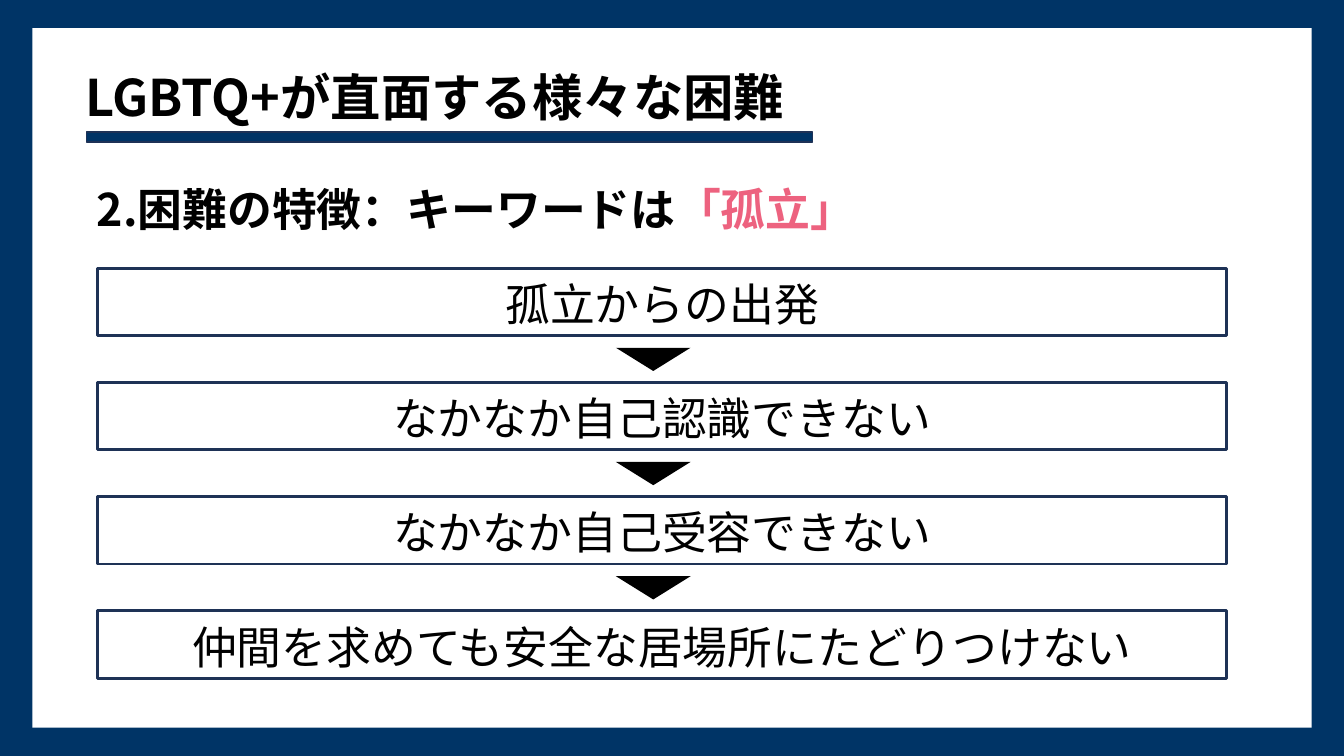
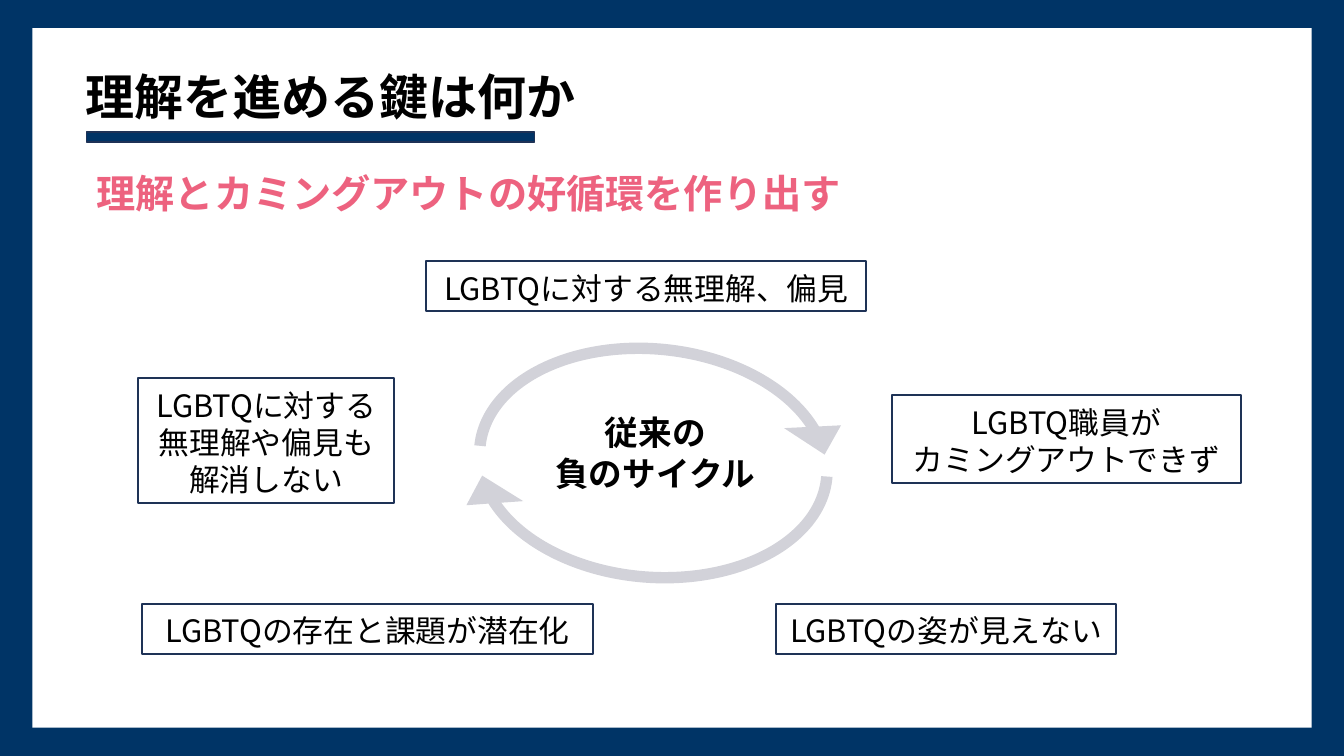
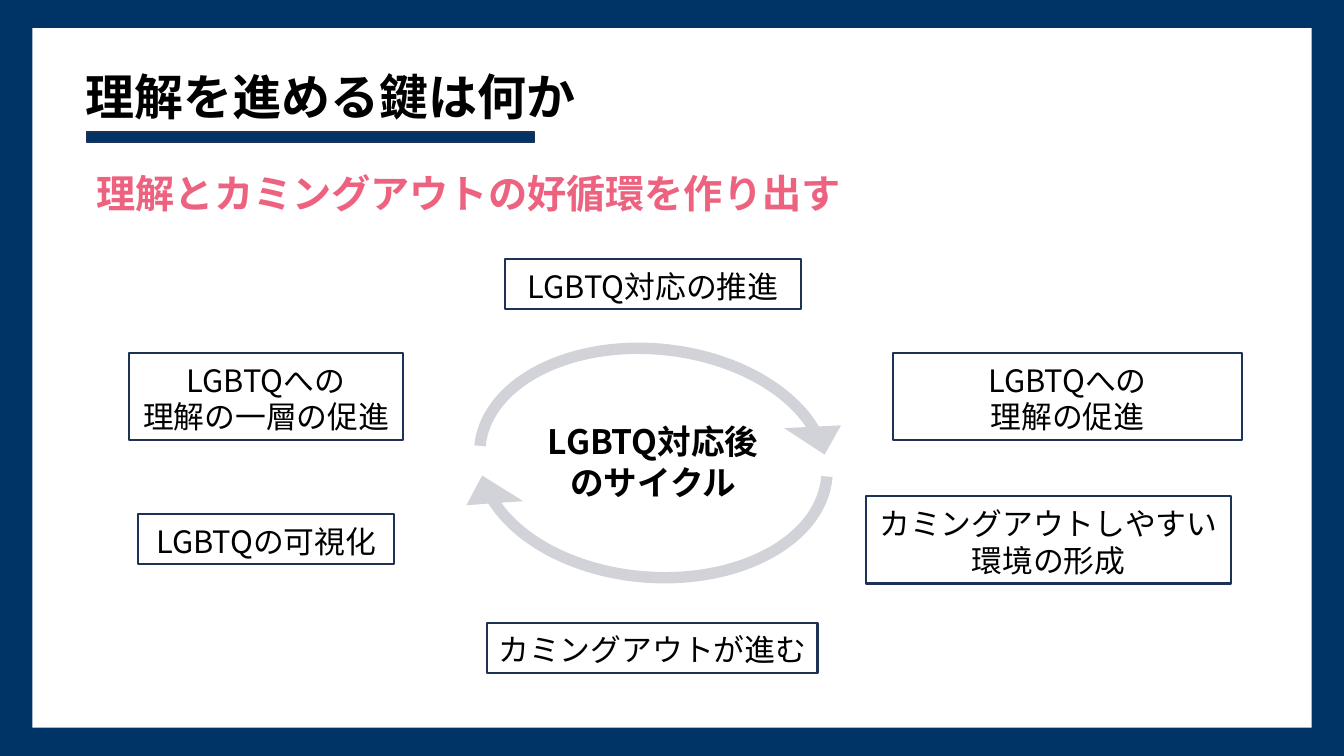
import pptx
import pptx.dml.color
import pptx.enum.shapes
import pptx.enum.text
import pptx.oxml.ns
import pptx.util
from lxml import etree

RGBColor = pptx.dml.color.RGBColor
SHAPE = pptx.enum.shapes.MSO_SHAPE
ALIGN = pptx.enum.text.PP_ALIGN
ANCHOR = pptx.enum.text.MSO_ANCHOR

NAVY = RGBColor(0x00, 0x34, 0x66)
OUTLINE = RGBColor(0x1E, 0x32, 0x56)
PINK = RGBColor(0xED, 0x62, 0x7F)
GRAY = RGBColor(0xD2, 0xD2, 0xD9)
BLACK = RGBColor(0x00, 0x00, 0x00)
WHITE = RGBColor(0xFF, 0xFF, 0xFF)
FONT = "Noto Sans CJK JP"

deck = pptx.Presentation()
deck.slide_width = pptx.util.Inches(13.33)
deck.slide_height = pptx.util.Inches(7.5)
deck.slide_master.background.fill.solid()
deck.slide_master.background.fill.fore_color.rgb = NAVY


def add_block(page, kind, area, fill=None, line_width=0):
    """Add a preset shape, or a text box if kind is None; area is in percent of the slide."""
    left, top, width, height = area
    lengths = [round(deck.slide_width * left / 100), round(deck.slide_height * top / 100),
               round(deck.slide_width * width / 100), round(deck.slide_height * height / 100)]
    if kind is None:
        return page.shapes.add_textbox(*lengths)
    block = page.shapes.add_shape(kind, *lengths)
    block.shadow.inherit = False
    if fill is None:
        block.fill.background()
    else:
        block.fill.solid()
        block.fill.fore_color.rgb = fill
    if line_width:
        block.line.color.rgb = OUTLINE
        block.line.width = pptx.util.Pt(line_width)
    else:
        block.line.fill.background()
    return block


def write(block, lines, size, bold=False, align=ALIGN.CENTER, anchor=ANCHOR.MIDDLE):
    """Write one paragraph per line; a line is a list of (text, colour) spans."""
    frame = block.text_frame
    frame.word_wrap = True
    frame.vertical_anchor = anchor
    for index, spans in enumerate(lines):
        para = frame.paragraphs[0] if index == 0 else frame.add_paragraph()
        para.alignment = align
        for text, color in spans:
            span = para.add_run()
            span.text = text
            span.font.size = pptx.util.Pt(size)
            span.font.bold = bold
            span.font.color.rgb = color
            span.font.name = FONT
            east_asian = etree.SubElement(span._r.get_or_add_rPr(), pptx.oxml.ns.qn("a:ea"))
            east_asian.set("typeface", FONT)


# Frame, title, rule and heading of every slide
KEY_TITLE = "理解を進める鍵は何か"
KEY_HEADING = [("理解とカミングアウトの好循環を作り出す", PINK)]
HEADERS = [
    ("LGBTQ+が直面する様々な困難", 36, 54,
     [("2.困難の特徴：キーワードは", BLACK), ("「孤立」", PINK)], 32, 23.33),
    (KEY_TITLE, 35, 33.3, KEY_HEADING, 28, 21.73),
    (KEY_TITLE, 35, 33.3, KEY_HEADING, 28, 21.73),
]
pages = []
for title, title_size, rule_width, heading, heading_size, heading_top in HEADERS:
    page = deck.slides.add_slide(deck.slide_layouts[6])
    pages.append(page)
    add_block(page, SHAPE.RECTANGLE, (2.4, 3.73, 95.2, 92.53), WHITE)
    title_box = add_block(page, None, (5.63, 8.4, 90.9, 9.6))
    write(title_box, [[(title, BLACK)]], title_size, True, ALIGN.LEFT)
    title_box.text_frame.paragraphs[0].line_spacing = 0.9
    add_block(page, SHAPE.RECTANGLE, (6.45, 17.47, rule_width, 1.33), NAVY, 1)
    heading_box = add_block(page, None, (6.45, heading_top, 87.1, 8.53))
    write(heading_box, [heading], heading_size, True, ALIGN.LEFT, ANCHOR.TOP)

# Slide 1: steps joined by triangles
STEPS = ["孤立からの出発", "なかなか自己認識できない", "なかなか自己受容できない",
         "仲間を求めても安全な居場所にたどりつけない"]
STEP_TOP, STEP_HEIGHT, STEP_PITCH = 35.47, 8.93, 15.11
for index, step in enumerate(STEPS):
    top = STEP_TOP + index * STEP_PITCH
    box = add_block(pages[0], SHAPE.RECTANGLE, (7.28, top, 84, STEP_HEIGHT), None, 2)
    box.text_frame.margin_top = pptx.util.Inches(0.08)
    write(box, [[(step, BLACK)]], 32)
    if index < len(STEPS) - 1:
        triangle_area = (45.83, top + STEP_HEIGHT + 1.6, 5.55, 3.07)
        triangle = add_block(pages[0], SHAPE.ISOSCELES_TRIANGLE, triangle_area, BLACK)
        triangle.rotation = 180

# Slides 2 and 3: a cycle, with (left, top, width, lines) for each station
CYCLES = [
    (36.98, 53.87, ["従来の", "負のサイクル"], [
        (31.73, 34.53, 32.7, ["LGBTQに対する無理解、偏見"]),
        (66.38, 52.27, 25.95, ["LGBTQ職員が", "カミングアウトできず"]),
        (10.58, 79.87, 33.53, ["LGBTQの存在と課題が潜在化"]),
        (10.28, 50, 19.05, ["LGBTQに対する", "無理解や偏見も", "解消しない"]),
        (57.75, 79.87, 25.28, ["LGBTQの姿が見えない"]),
    ]),
    (36.83, 55.07, ["LGBTQ対応後", "のサイクル"], [
        (37.58, 34.27, 22.05, ["LGBTQ対応の推進"]),
        (66.45, 46.67, 25.95, ["LGBTQへの", "理解の促進"]),
        (36.23, 82.4, 24.6, ["カミングアウトが進む"]),
        (10.28, 68, 19.05, ["LGBTQの可視化"]),
        (64.43, 65.6, 27.15, ["カミングアウトしやすい", "環境の形成"]),
        (9.6, 46.67, 20.4, ["LGBTQへの", "理解の一層の促進"]),
    ]),
]
ARROW_ADJUSTMENTS = [0.04, 6.01, 204.86, 108, 0.1]
BOX_PADDING, LINE_HEIGHT = 1.73, 4.93
for page, (center_left, center_top, center_lines, stations) in zip(pages[1:], CYCLES):
    for angle in (5.7, 184.4):
        arrow = add_block(page, SHAPE.CIRCULAR_ARROW, (33.53, 42.4, 30.15, 37.73), GRAY)
        arrow.rotation = angle
        for index, value in enumerate(ARROW_ADJUSTMENTS):
            arrow.adjustments[index] = value
    center = add_block(page, None, (center_left, center_top, 23.55, 12.13))
    write(center, [[(line, BLACK)] for line in center_lines], 24, True, anchor=ANCHOR.TOP)
    for left, top, width, lines in stations:
        height = BOX_PADDING + LINE_HEIGHT * len(lines)
        box = add_block(page, SHAPE.RECTANGLE, (left, top, width, height), None, 1.5)
        box.text_frame.margin_top = pptx.util.Inches(0.08)
        write(box, [[(line, BLACK)] for line in lines], 22)

deck.save("out.pptx")
